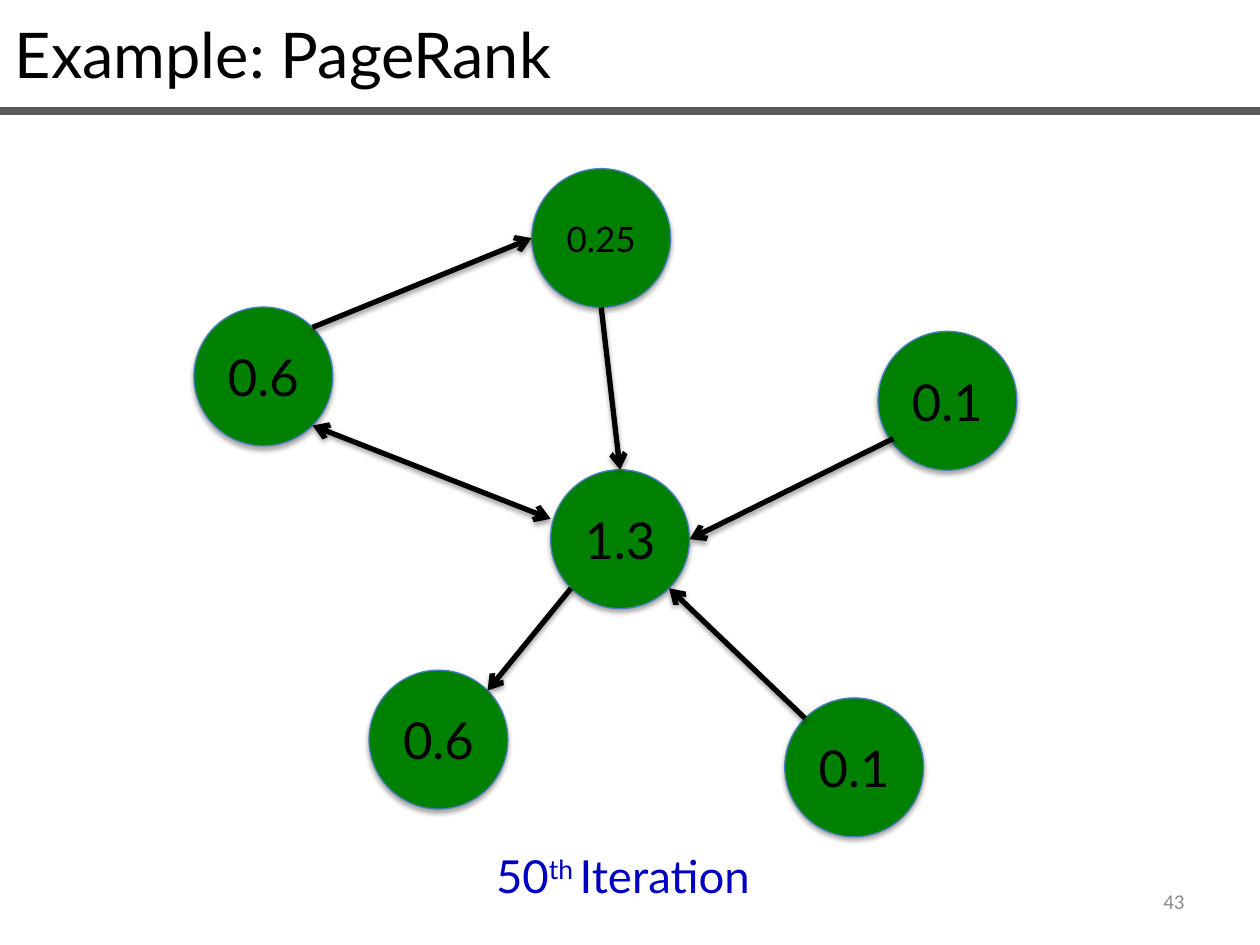
from math import cos, pi, sin

from lxml.etree import SubElement
from pptx import Presentation
from pptx.dml.color import RGBColor as RGB
from pptx.enum.shapes import MSO_CONNECTOR as LINK, MSO_SHAPE as SHAPE
from pptx.enum.text import MSO_ANCHOR as ANCHOR, PP_ALIGN as ALIGN
from pptx.oxml.ns import qn
from pptx.util import Cm, Pt

COLORS = {
    "node": "008000", "edge": "4B7EBC", "ink": "000000",
    "rule": "595959", "note": "0000C0", "page": "8C8C8C",
}
rgb = {name: RGB.from_string(code) for name, code in COLORS.items()}


def shade(props, alpha, dist):
    """Add a soft black shadow that falls straight down; no alpha means no shadow."""
    effects = SubElement(props, qn("a:effectLst"))
    if alpha:
        outer = SubElement(effects, qn("a:outerShdw"), blurRad=str(Pt(3.1)),
                           dist=str(Pt(dist)), dir="5400000", rotWithShape="0")
        black = SubElement(outer, qn("a:srgbClr"), val=COLORS["ink"])
        SubElement(black, qn("a:alpha"), val=str(alpha * 1000))


def write(box, text, size, color, align, font="Lato", anchor=ANCHOR.TOP):
    frame = box.text_frame
    frame.word_wrap = True
    frame.vertical_anchor = anchor
    frame.text = text
    par = frame.paragraphs[0]
    par.alignment = align
    for run in par.runs:
        run.font.name = font
        run.font.size = Pt(size)
        run.font.color.rgb = rgb[color]
    return par


deck = Presentation()
deck.slide_width, deck.slide_height = Cm(25.4), Cm(19.05)
slide = deck.slides.add_slide(deck.slide_layouts[6])
shapes = slide.shapes

# Page number
page = shapes.add_textbox(Cm(18.21), Cm(17.65), Cm(5.92), Cm(1.02))
write(page, "43", 12, "page", ALIGN.RIGHT, "Calibri", ANCHOR.MIDDLE)

# Ranked pages: centre x, centre y, rank, text size
RADIUS = 1.4
NODES = {
    "low": (17.22, 15.47, "0.1", 29),
    "left": (5.31, 7.59, "0.6", 29),
    "top": (12.12, 4.8, "0.25", 20),
    "right": (19.1, 8.08, "0.1", 29),
    "hub": (12.5, 10.87, "1.3", 29),
    "base": (8.84, 14.91, "0.6", 29),
}
discs = {}
for name, (x, y, rank, size) in NODES.items():
    disc = shapes.add_shape(SHAPE.OVAL, Cm(x - RADIUS), Cm(y - RADIUS),
                            Cm(2 * RADIUS), Cm(2 * RADIUS))
    disc.fill.solid()
    disc.fill.fore_color.rgb = rgb["node"]
    disc.line.color.rgb = rgb["edge"]
    disc.line.width = Pt(0.75)
    shade(disc._element.spPr, 35, 1.8)
    write(disc, rank, size, "ink", ALIGN.CENTER, anchor=ANCHOR.MIDDLE)
    discs[name] = disc

# Links: each end is (node, site) or a free point (x, y).
# An oval has eight sites, counted anticlockwise from the top.
LINKS = [
    (("left", 5), (11.1, 10.46), True),
    (("top", 4), ("hub", 0), False),
    ((18.01, 8.84), ("hub", 6), False),
    (("low", 1), ("hub", 5), False),
    (("hub", 3), ("base", 7), False),
    (("left", 7), ("top", 2), False),
]
for start, end, both in LINKS:
    spots = []
    for node, site in (start, end):
        if node in NODES:
            x, y = NODES[node][:2]
            turn = site * pi / 4
            spots += [Cm(x - RADIUS * sin(turn)), Cm(y - RADIUS * cos(turn))]
        else:
            spots += [Cm(node), Cm(site)]
    link = shapes.add_connector(LINK.STRAIGHT, *spots)
    link.line.color.rgb = rgb["ink"]
    link.line.width = Pt(3)
    stroke = link.line._get_or_add_ln()
    for tip in ("a:headEnd", "a:tailEnd") if both else ("a:tailEnd",):
        SubElement(stroke, qn(tip), type="arrow")
    shade(link._element.spPr, 38, 1.6)
    glue = link._element.nvCxnSpPr.cNvCxnSpPr
    for tag, (node, site) in (("a:stCxn", start), ("a:endCxn", end)):
        if node in NODES:
            SubElement(glue, qn(tag), id=str(discs[node].shape_id), idx=str(site))

# Caption with a raised ordinal
note = shapes.add_textbox(Cm(3.91), Cm(16.97), Cm(17.3), Cm(1.37))
par = write(note, "50", 26, "note", ALIGN.CENTER)
for text, lift in (("th ", "30000"), ("Iteration", "0")):
    run = par.add_run()
    run.text = text
    run.font.name = "Lato"
    run.font.size = Pt(26)
    run.font.color.rgb = rgb["note"]
    run._r.get_or_add_rPr().set("baseline", lift)

# Title and the rule below it
title = shapes.add_textbox(Cm(0.05), Cm(0.18), Cm(23.98), Cm(1.8))
write(title, "Example: PageRank", 36, "ink", ALIGN.LEFT)
rule = shapes.add_connector(LINK.STRAIGHT, 0, Cm(2.24), deck.slide_width, Cm(2.24))
rule.line.color.rgb = rgb["rule"]
rule.line.width = Pt(4.5)
shade(rule._element.spPr, 0, 0)

deck.save("out.pptx")
